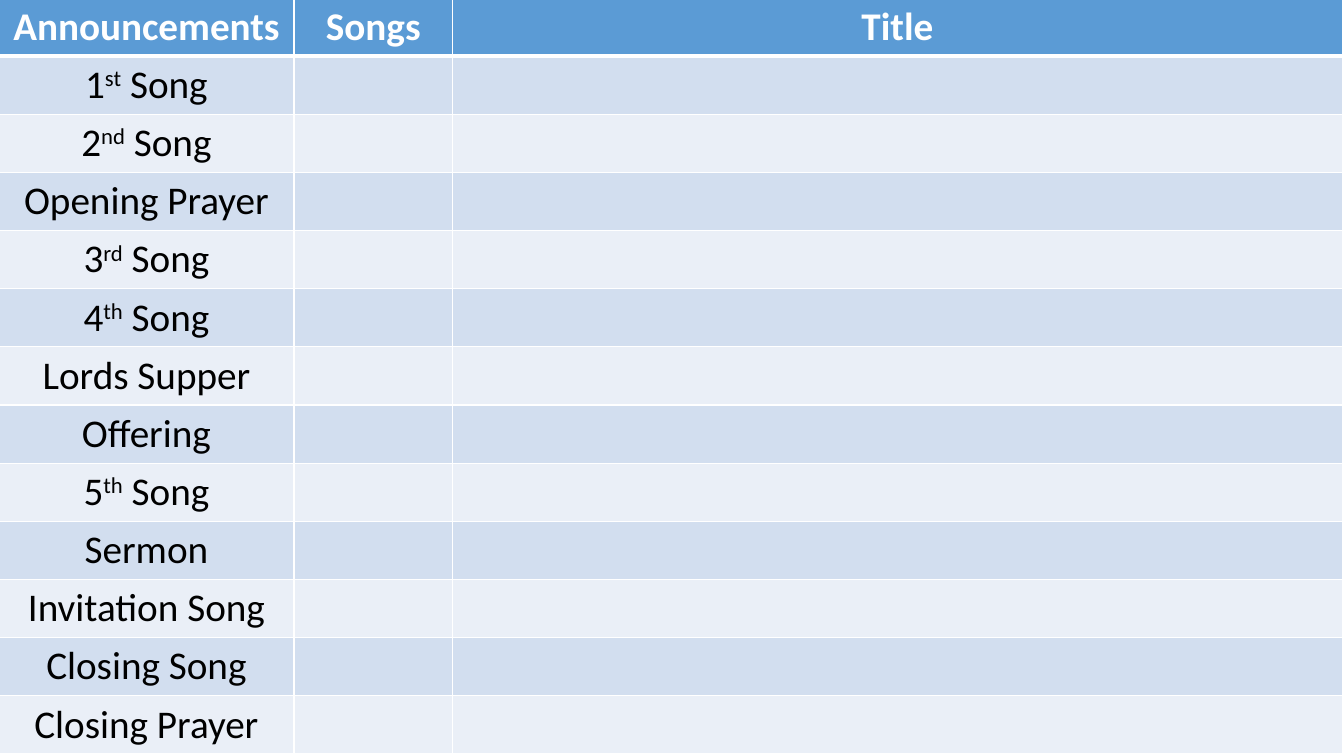
from dataclasses import dataclass

from lxml.etree import SubElement
from pptx import Presentation
from pptx.dml.color import RGBColor
from pptx.enum.text import MSO_ANCHOR, PP_ALIGN
from pptx.oxml.ns import qn
from pptx.table import _Cell
from pptx.util import Cm, Pt

COLORS = {
    "header": "5B9BD5",
    "odd_row": "D2DEEF",
    "even_row": "EAEFF7",
    "border": "FFFFFF",
    "header_text": "FFFFFF",
    "body_text": "000000",
}
HEADINGS = ["Announcements", "Songs", "Title"]
COLUMN_WIDTHS = [7.44, 3.99, 22.43]
SLIDE_WIDTH, SLIDE_HEIGHT = 33.87, 19.05
THIN, THICK = 1, 3


@dataclass(frozen=True)
class ServiceItem:
    text: str
    ordinal: str = ""
    rest: str = ""


SERVICE_ITEMS = [
    ServiceItem("1", "st", " Song"),
    ServiceItem("2", "nd", " Song"),
    ServiceItem("Opening Prayer"),
    ServiceItem("3", "rd", " Song"),
    ServiceItem("4", "th", " Song"),
    ServiceItem("Lords Supper"),
    ServiceItem("Offering"),
    ServiceItem("5", "th", " Song"),
    ServiceItem("Sermon"),
    ServiceItem("Invitation Song"),
    ServiceItem("Closing Song"),
    ServiceItem("Closing Prayer"),
]


def style_cell(cell: _Cell, fill: str, top: int, bottom: int) -> None:
    cell.vertical_anchor = MSO_ANCHOR.TOP
    properties = cell._tc.get_or_add_tcPr()
    widths = {"a:lnL": THIN, "a:lnR": THIN, "a:lnT": top, "a:lnB": bottom}
    for tag, width in widths.items():
        line = SubElement(properties, qn(tag), w=str(Pt(width)))
        line_fill = SubElement(line, qn("a:solidFill"))
        SubElement(line_fill, qn("a:srgbClr"), val=COLORS["border"])
    cell.fill.solid()
    cell.fill.fore_color.rgb = RGBColor.from_string(COLORS[fill])


def write_item(cell: _Cell, item: ServiceItem, color: str, bold: bool) -> None:
    para = cell.text_frame.paragraphs[0]
    para.alignment = PP_ALIGN.CENTER
    font_format = {"name": "Calibri", "size": Pt(28), "bold": bold}
    for text in filter(None, (item.text, item.ordinal, item.rest)):
        span = para.add_run()
        span.text = text
        for name, value in font_format.items():
            setattr(span.font, name, value)
        span.font.color.rgb = RGBColor.from_string(COLORS[color])
        if text == item.ordinal:
            span._r.get_or_add_rPr().set("baseline", "30000")


def add_service_table(page) -> None:
    row_count = len(SERVICE_ITEMS) + 1
    table = page.shapes.add_table(
        row_count, len(HEADINGS), Cm(-0.03), Cm(-0.05), Cm(SLIDE_WIDTH), Cm(SLIDE_HEIGHT)
    ).table
    for column, width in zip(table.columns, COLUMN_WIDTHS):
        column.width = Cm(width)
    for row in table.rows:
        row.height = Cm(SLIDE_HEIGHT / row_count)

    for index, heading in enumerate(HEADINGS):
        cell = table.cell(0, index)
        style_cell(cell, "header", THIN, THICK)
        write_item(cell, ServiceItem(heading), "header_text", True)

    for number, item in enumerate(SERVICE_ITEMS, start=1):
        fill = "odd_row" if number % 2 else "even_row"
        for cell in table.rows[number].cells:
            style_cell(cell, fill, THICK if number == 1 else THIN, THIN)
        write_item(table.cell(number, 0), item, "body_text", False)


def main() -> None:
    deck = Presentation()
    deck.slide_width, deck.slide_height = Cm(SLIDE_WIDTH), Cm(SLIDE_HEIGHT)
    page = deck.slides.add_slide(deck.slide_layouts[6])
    add_service_table(page)
    deck.save("out.pptx")


if __name__ == "__main__":
    main()
